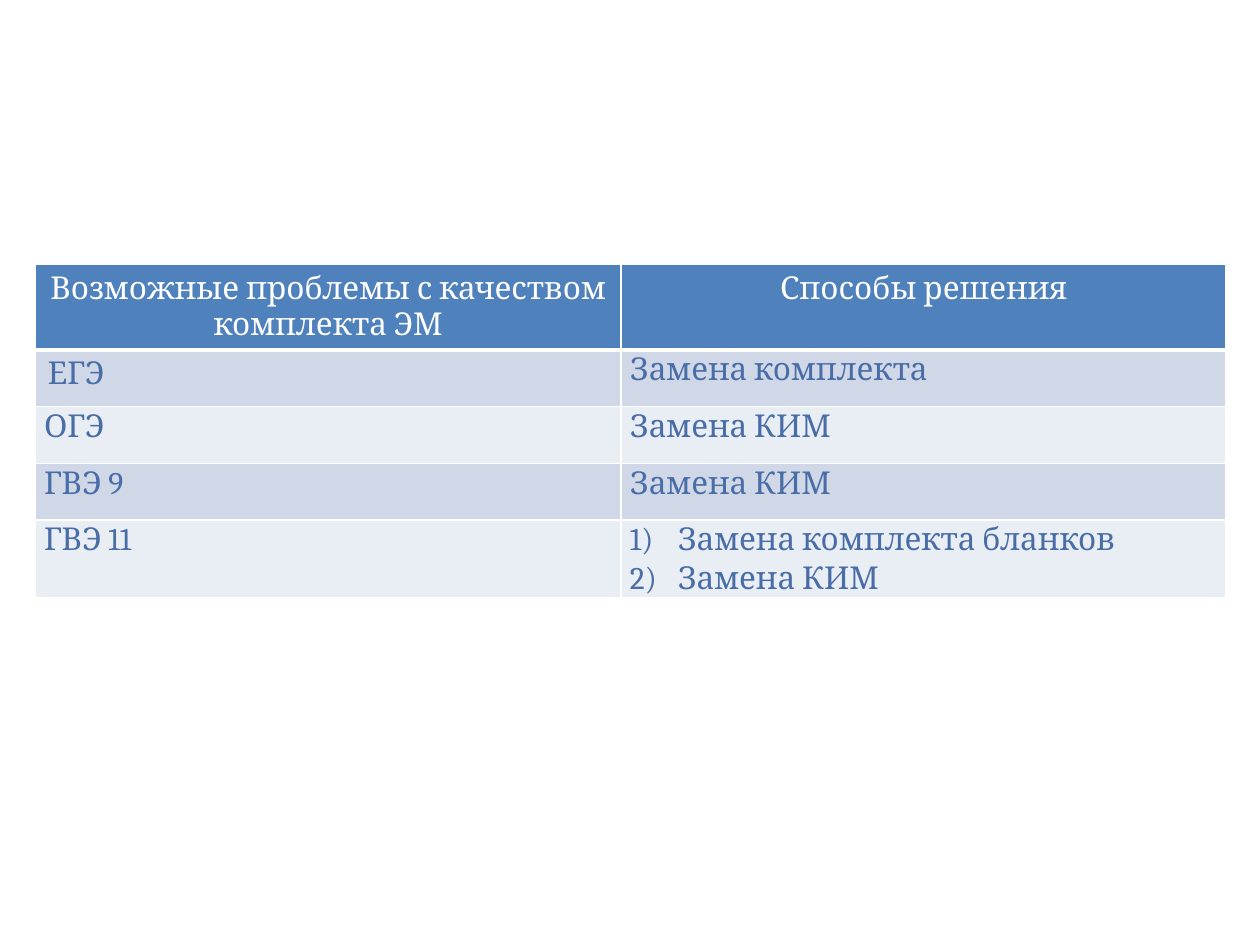
"""Build a slide with a table of exam kit problems and their solutions."""
from dataclasses import dataclass
from typing import Optional

from lxml import etree
from pptx import Presentation
from pptx import util as u
from pptx.dml.color import RGBColor
from pptx.enum import text
from pptx.oxml import ns

WHITE, HEADER, INK = "FFFFFF", "4F81BD", "496DA7"
BANDS = ("D0D8E8", "E9EDF4")
COLS = (4.65, 4.8)
ROWS = (0.47, 0.45, 0.45, 0.45, 0.45)
TIGHT = {"margin_left": u.Inches(0.07), "margin_right": u.Inches(0.07),
         "margin_top": 0, "margin_bottom": 0}


@dataclass
class Entry:
    lines: tuple[str, ...]
    fill: str
    color: str = INK
    align: Optional[text.PP_ALIGN] = None
    tight: bool = True
    numbered: bool = False


def header(label: str) -> Entry:
    return Entry((label,), HEADER, WHITE, text.PP_ALIGN.CENTER, tight=False)


GRID = (
    (header("Возможные проблемы с качеством комплекта ЭМ"), header("Способы решения")),
    (Entry(("ЕГЭ",), BANDS[0], tight=False), Entry(("Замена комплекта",), BANDS[0])),
    (Entry(("ОГЭ",), BANDS[1]), Entry(("Замена КИМ",), BANDS[1])),
    (Entry(("ГВЭ 9",), BANDS[0]), Entry(("Замена КИМ",), BANDS[0])),
    (Entry(("ГВЭ 11",), BANDS[1]),
     Entry(("Замена комплекта бланков", "Замена КИМ"), BANDS[1], numbered=True)),
)


def rgb(value: str) -> RGBColor:
    return RGBColor.from_string(value)


def set_format(obj, values: dict) -> None:
    for name, value in values.items():
        setattr(obj, name, value)


def add_borders(cell, widths: dict[str, float]) -> None:
    tcPr = cell._tc.get_or_add_tcPr()
    for side, width in widths.items():
        ln = etree.SubElement(tcPr, ns.qn(f"a:ln{side}"), w=str(u.Pt(width)))
        fill = etree.SubElement(ln, ns.qn("a:solidFill"))
        etree.SubElement(fill, ns.qn("a:srgbClr"), val=WHITE)


def add_number(p) -> None:
    pPr = p._p.get_or_add_pPr()
    pPr.set("marL", str(u.Inches(0.38)))
    pPr.set("indent", str(u.Inches(-0.38)))
    etree.SubElement(pPr, ns.qn("a:buFont"), typeface="+mj-lt")
    etree.SubElement(pPr, ns.qn("a:buAutoNum"), type="arabicParenR")


def fill_cell(cell, entry: Entry, row: int) -> None:
    add_borders(cell, {"L": 1, "R": 1, "T": 3 if row == 1 else 1, "B": 3 if row == 0 else 1})
    cell.fill.solid()
    cell.fill.fore_color.rgb = rgb(entry.fill)
    if entry.tight:
        set_format(cell, TIGHT)
    tf = cell.text_frame
    for i, line in enumerate(entry.lines):
        p = tf.add_paragraph() if i else tf.paragraphs[0]
        if entry.align is not None:
            p.alignment = entry.align
        if entry.tight:
            p.line_spacing = 1.07
        if entry.numbered:
            add_number(p)
        r = p.add_run()
        r.text = line
        set_format(r.font, {"name": "Cambria", "size": u.Pt(18), "bold": False})
        r.font.color.rgb = rgb(entry.color)


def main() -> None:
    prs = Presentation()
    prs.slide_width, prs.slide_height = u.Inches(10), u.Inches(7.5)
    s = prs.slides.add_slide(prs.slide_layouts[6])
    table = s.shapes.add_table(len(ROWS), len(COLS), u.Inches(0.28), u.Inches(2.1),
                               u.Inches(sum(COLS)), u.Inches(2.7)).table
    for col, width in zip(table.columns, COLS):
        col.width = u.Inches(width)
    for row, height in zip(table.rows, ROWS):
        row.height = u.Inches(height)
    for i, entries in enumerate(GRID):
        for j, entry in enumerate(entries):
            fill_cell(table.cell(i, j), entry, i)
    prs.save("out.pptx")


if __name__ == "__main__":
    main()
